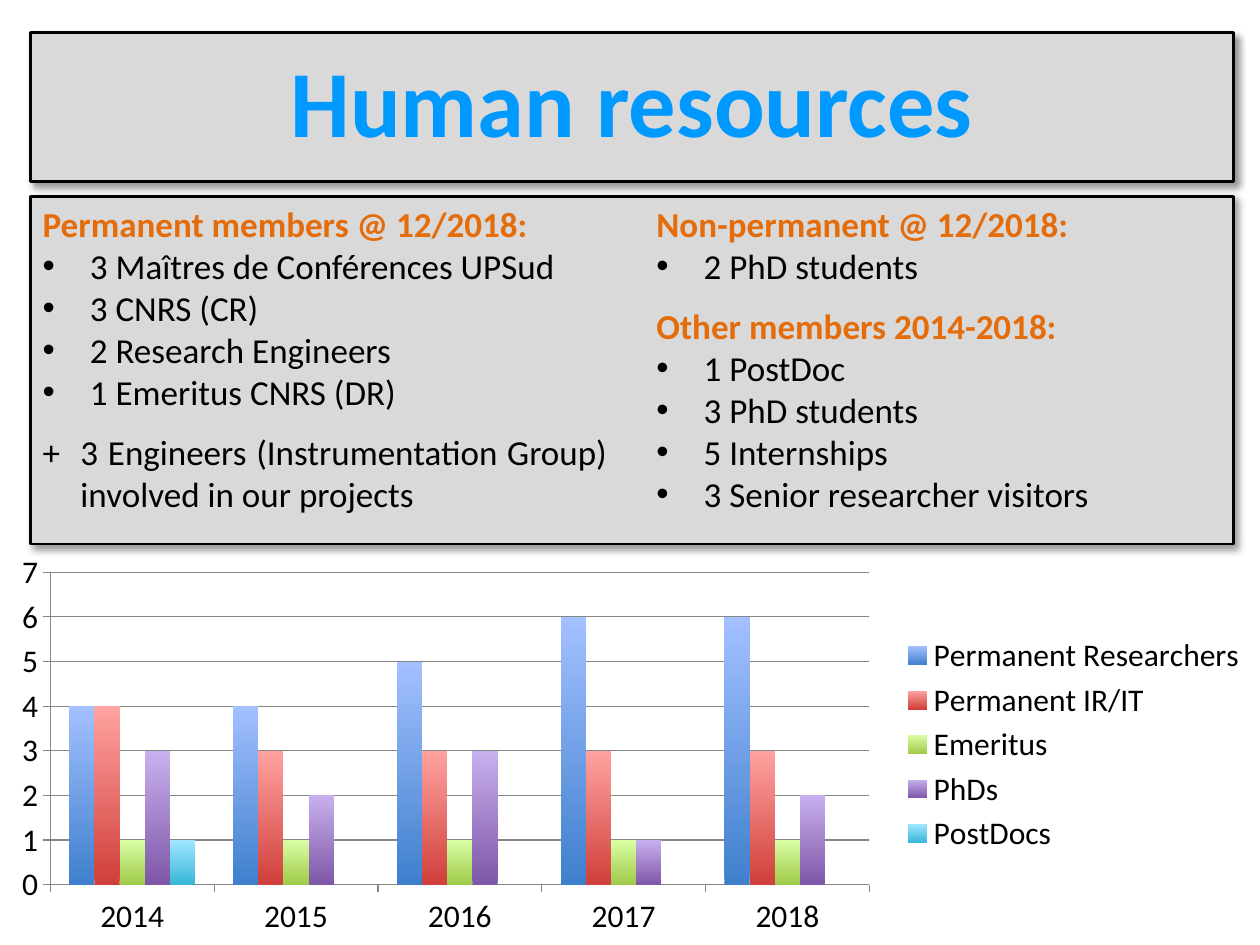
from dataclasses import dataclass

from lxml.etree import SubElement
from pptx import Presentation
from pptx.chart.chart import Chart
from pptx.chart.data import CategoryChartData
from pptx.dml.color import RGBColor
from pptx.enum.chart import XL_CHART_TYPE, XL_LEGEND_POSITION, XL_TICK_MARK
from pptx.enum.shapes import MSO_SHAPE
from pptx.enum.text import MSO_ANCHOR, PP_ALIGN
from pptx.oxml import parse_xml
from pptx.oxml.ns import nsdecls, qn
from pptx.shapes.autoshape import Shape
from pptx.slide import Slide
from pptx.text.text import TextFrame
from pptx.util import Pt

BLACK = RGBColor(0x00, 0x00, 0x00)
PANEL = RGBColor(0xD9, 0xD9, 0xD9)
BLUE = RGBColor(0x00, 0x99, 0xFF)
ORANGE = RGBColor(0xE4, 0x6C, 0x0A)
GRID = RGBColor(0x86, 0x86, 0x86)
FONT = "Calibri"
LEFT, WIDTH = 17.3, 687.6


@dataclass
class Line:
    text: str
    head: bool = False
    bullet: bool = True
    hang: float = 27
    before: float = 0
    align: PP_ALIGN = PP_ALIGN.LEFT


@dataclass
class Series:
    name: str
    values: tuple[int, ...]
    top: RGBColor
    base: RGBColor


LINES = [
    Line("Permanent members @ 12/2018:", head=True),
    Line("3 Maîtres de Conférences UPSud"),
    Line("3 CNRS (CR)"),
    Line("2 Research Engineers"),
    Line("1 Emeritus CNRS (DR)"),
    Line("+\t3 Engineers (Instrumentation Group) involved in our projects",
         bullet=False, hang=21.6, before=10, align=PP_ALIGN.JUSTIFY),
    Line("Non-permanent @ 12/2018:", head=True),
    Line("2 PhD students"),
    Line("Other members 2014-2018:", head=True, before=10),
    Line("1 PostDoc"),
    Line("3 PhD students"),
    Line("5 Internships"),
    Line("3 Senior researcher visitors"),
]
YEARS = ("2014", "2015", "2016", "2017", "2018")
STAFF = [
    Series("Permanent Researchers", (4, 4, 5, 6, 6),
           RGBColor(0xA3, 0xC0, 0xFF), RGBColor(0x3F, 0x80, 0xCD)),
    Series("Permanent IR/IT", (4, 3, 3, 3, 3),
           RGBColor(0xFF, 0xA3, 0xA0), RGBColor(0xD0, 0x3F, 0x3B)),
    Series("Emeritus", (1, 1, 1, 1, 1),
           RGBColor(0xDA, 0xFE, 0xA5), RGBColor(0xA0, 0xCA, 0x4A)),
    Series("PhDs", (3, 2, 3, 1, 2),
           RGBColor(0xC8, 0xB0, 0xEE), RGBColor(0x7E, 0x57, 0xA7)),
    Series("PostDocs", (1, 0, 0, 0, 0),
           RGBColor(0xA0, 0xE6, 0xFF), RGBColor(0x38, 0xB6, 0xD8)),
]


def add_panel(slide: Slide, top: float, height: float) -> Shape:
    """Add a grey bordered box with a soft shadow."""
    box = slide.shapes.add_shape(
        MSO_SHAPE.RECTANGLE, Pt(LEFT), Pt(top), Pt(WIDTH), Pt(height))
    box.fill.solid()
    box.fill.fore_color.rgb = PANEL
    box.line.color.rgb = BLACK
    box.line.width = Pt(1.5)
    box.shadow.inherit = False
    glow = box._element.spPr.find(qn("a:effectLst"))
    glow.append(parse_xml(
        f'<a:outerShdw {nsdecls("a")} blurRad="{Pt(4)}" dist="{Pt(3)}" '
        'dir="2700000" algn="tl" rotWithShape="0"><a:srgbClr val="000000">'
        '<a:alpha val="40000"/></a:srgbClr></a:outerShdw>'))
    box.text_frame.word_wrap = True
    box.text_frame.vertical_anchor = MSO_ANCHOR.TOP
    return box


def add_run(para, text: str, size: float, color: RGBColor, bold: bool) -> None:
    run = para.add_run()
    run.text = text
    run.font.name = FONT
    run.font.size = Pt(size)
    run.font.bold = bold
    run.font.color.rgb = color


def add_line(frame: TextFrame, line: Line, first: bool) -> None:
    para = frame.paragraphs[0] if first else frame.add_paragraph()
    para.alignment = line.align
    para.space_before = Pt(line.before)
    if not line.head:
        props = para._p.get_or_add_pPr()
        props.set("marL", str(Pt(line.hang)))
        props.set("indent", str(-Pt(line.hang)))
        if line.bullet:
            SubElement(props, qn("a:buFont")).set("typeface", "Arial")
            SubElement(props, qn("a:buChar")).set("char", "•")
    add_run(para, line.text, 20, ORANGE if line.head else BLACK, line.head)


def place_plot(chart: Chart, x: float, y: float, w: float, h: float) -> None:
    """Fix the inner plot area, in fractions of the chart."""
    area = chart._chartSpace.chart.plotArea
    for old in area.findall(qn("c:layout")):
        area.remove(old)
    area.insert(0, parse_xml(
        f'<c:layout {nsdecls("c")}><c:manualLayout>'
        '<c:layoutTarget val="inner"/><c:xMode val="edge"/>'
        f'<c:yMode val="edge"/><c:x val="{x}"/><c:y val="{y}"/>'
        f'<c:w val="{w}"/><c:h val="{h}"/></c:manualLayout></c:layout>'))


def add_graph(slide: Slide) -> None:
    data = CategoryChartData()
    data.categories = YEARS
    for item in STAFF:
        data.add_series(item.name, item.values)
    chart = slide.shapes.add_chart(
        XL_CHART_TYPE.COLUMN_CLUSTERED,
        Pt(0), Pt(311), Pt(720), Pt(229), data).chart
    chart.has_title = False
    chart.font.name = FONT
    chart.font.size = Pt(18)
    chart.font.color.rgb = BLACK
    chart.has_legend = True
    chart.legend.position = XL_LEGEND_POSITION.RIGHT
    chart.legend.include_in_layout = False
    place_plot(chart, 0.04, 0.07, 0.65, 0.78)

    scale = chart.value_axis
    scale.minimum_scale, scale.maximum_scale, scale.major_unit = 0, 7, 1
    scale.has_major_gridlines = True
    scale.major_gridlines.format.line.color.rgb = GRID
    for axis in (scale, chart.category_axis):
        axis.major_tick_mark = XL_TICK_MARK.OUTSIDE
        axis.format.line.color.rgb = GRID

    plot = chart.plots[0]
    plot.gap_width = 150
    plot.vary_by_categories = False
    for bars, item in zip(plot.series, STAFF):
        fill = bars.format.fill
        fill.gradient()
        fill.gradient_angle = 90
        for stop, color in zip(fill.gradient_stops, (item.base, item.top)):
            stop.color.rgb = color


def main() -> None:
    deck = Presentation()
    deck.slide_width, deck.slide_height = Pt(720), Pt(540)
    slide = deck.slides.add_slide(deck.slide_layouts[6])

    body = add_panel(slide, 112.3, 198.7).text_frame
    body._txBody.bodyPr.set("numCol", "2")
    body._txBody.bodyPr.set("spcCol", str(Pt(28)))
    for i, line in enumerate(LINES):
        add_line(body, line, i == 0)

    title = add_panel(slide, 18.7, 85).text_frame
    title.margin_top = Pt(6)
    title.paragraphs[0].alignment = PP_ALIGN.CENTER
    add_run(title.paragraphs[0], "Human resources", 54, BLUE, True)

    add_graph(slide)
    deck.save("out.pptx")


if __name__ == "__main__":
    main()
